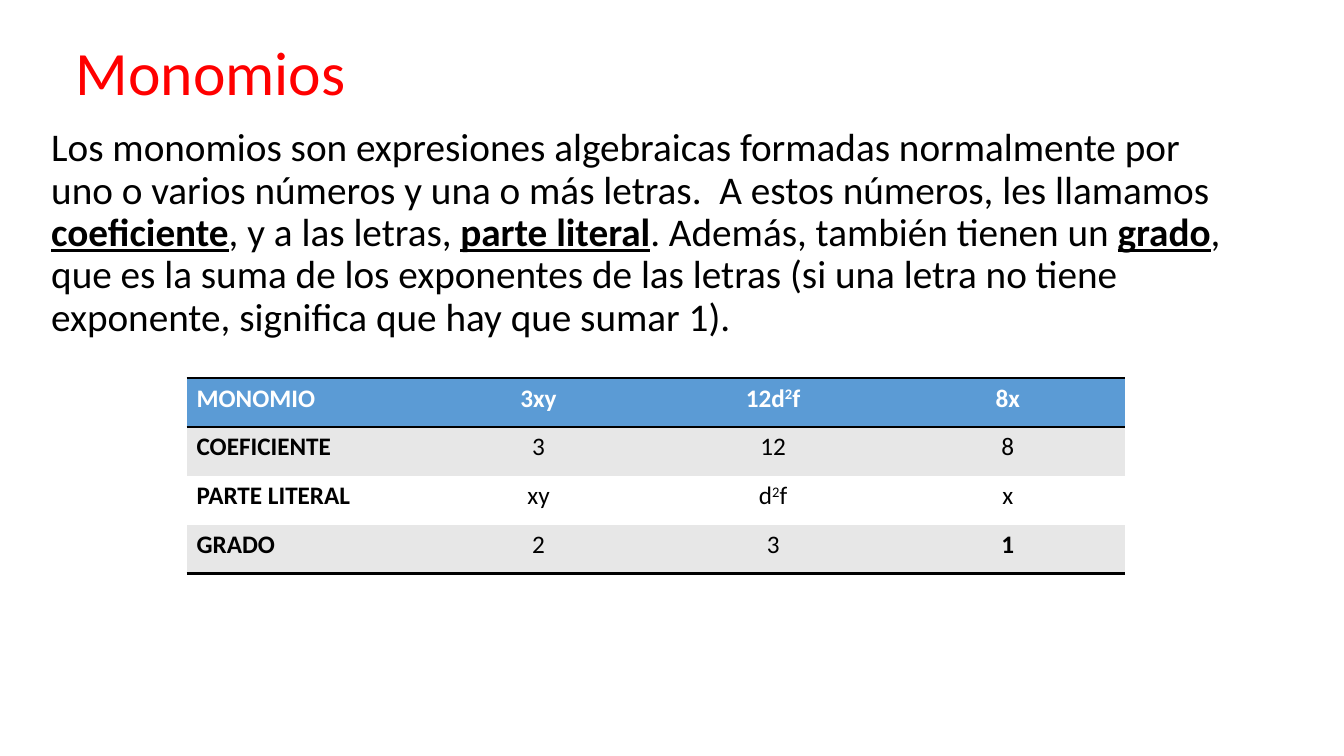
from lxml.etree import SubElement as Sub
from pptx import Presentation
from pptx.dml.color import RGBColor as Rgb
from pptx.enum.text import MSO_ANCHOR as Anchor, PP_ALIGN as Align
from pptx.oxml.ns import qn
from pptx.util import Inches, Pt

HUES = {"title": "FF0000", "ink": "000000", "head": "5B9BD5",
        "band": "E7E7E7", "paper": "FFFFFF"}
PLAIN = "{2D5ABB26-0587-4C30-8999-92F81FD0307C}"


def write(frame, text, size=18, hue="ink", bold=False, align=Align.LEFT,
          mark="raise", line=1.0, before=0):
    para = frame.paragraphs[0]
    para.alignment = align
    para.line_spacing = line
    para.space_before = Pt(before)
    for i, part in enumerate(text.split("|")):
        if not part:
            continue
        run = para.add_run()
        run.text = part
        font = run.font
        font.name = "Calibri"
        font.size = Pt(size)
        font.bold = bold
        font.color.rgb = Rgb.from_string(HUES[hue])
        if i % 2 and mark == "term":
            font.bold = font.underline = True
        elif i % 2:
            font._element.set("baseline", "30000")


def rule(cell, side):
    edge = Sub(cell._tc.get_or_add_tcPr(), qn("a:" + side), w=str(Pt(2)))
    fill = Sub(edge, qn("a:solidFill"))
    Sub(fill, qn("a:srgbClr"), val=HUES["ink"])


deck = Presentation()
deck.slide_width = Inches(13.33)
deck.slide_height = Inches(7.5)
slide = deck.slides.add_slide(deck.slide_layouts[5])

title = slide.shapes.title
title.left, title.top, title.width, title.height = map(Inches, (0.65, 0.27, 11.5, 0.95))
title.text_frame.vertical_anchor = Anchor.MIDDLE
write(title.text_frame, "Monomios", size=44, hue="title", line=0.9)

body = slide.shapes.add_textbox(*map(Inches, (0.41, 1.22, 12, 2.24))).text_frame
body.word_wrap = True
write(body, "Los monomios son expresiones algebraicas formadas normalmente por "
      "uno o varios números y una o más letras.  A estos números, les llamamos "
      "|coeficiente|, y a las letras, |parte literal|. Además, también tienen un "
      "|grado|, que es la suma de los exponentes de las letras (si una letra no "
      "tiene exponente, significa que hay que sumar 1).",
      size=28, mark="term", line=0.9, before=10)

ROWS = [
    ("MONOMIO", "3xy", "12d|2|f", "8x"),
    ("COEFICIENTE", "3", "12", "8"),
    ("PARTE LITERAL", "xy", "d|2|f", "x"),
    ("GRADO", "2", "3", "1"),
]
last = len(ROWS) - 1
grid = slide.shapes.add_table(len(ROWS), len(ROWS[0]),
                              *map(Inches, (1.85, 3.75, 9.31, 1.94))).table
grid._tbl.tblPr.find(qn("a:tableStyleId")).text = PLAIN
grid.horz_banding = False

for r, row in enumerate(ROWS):
    for c, text in enumerate(row):
        cell = grid.cell(r, c)
        if r == 0:
            rule(cell, "lnT")
        if r in (0, last):
            rule(cell, "lnB")
        tone = "head" if r == 0 else "band" if r % 2 else "paper"
        cell.fill.solid()
        cell.fill.fore_color.rgb = Rgb.from_string(HUES[tone])
        write(cell.text_frame, text, hue="ink" if r else "paper",
              bold=r == 0 or c == 0 or (r, c) == (last, 3),
              align=Align.CENTER if c else Align.LEFT)

deck.save("out.pptx")
